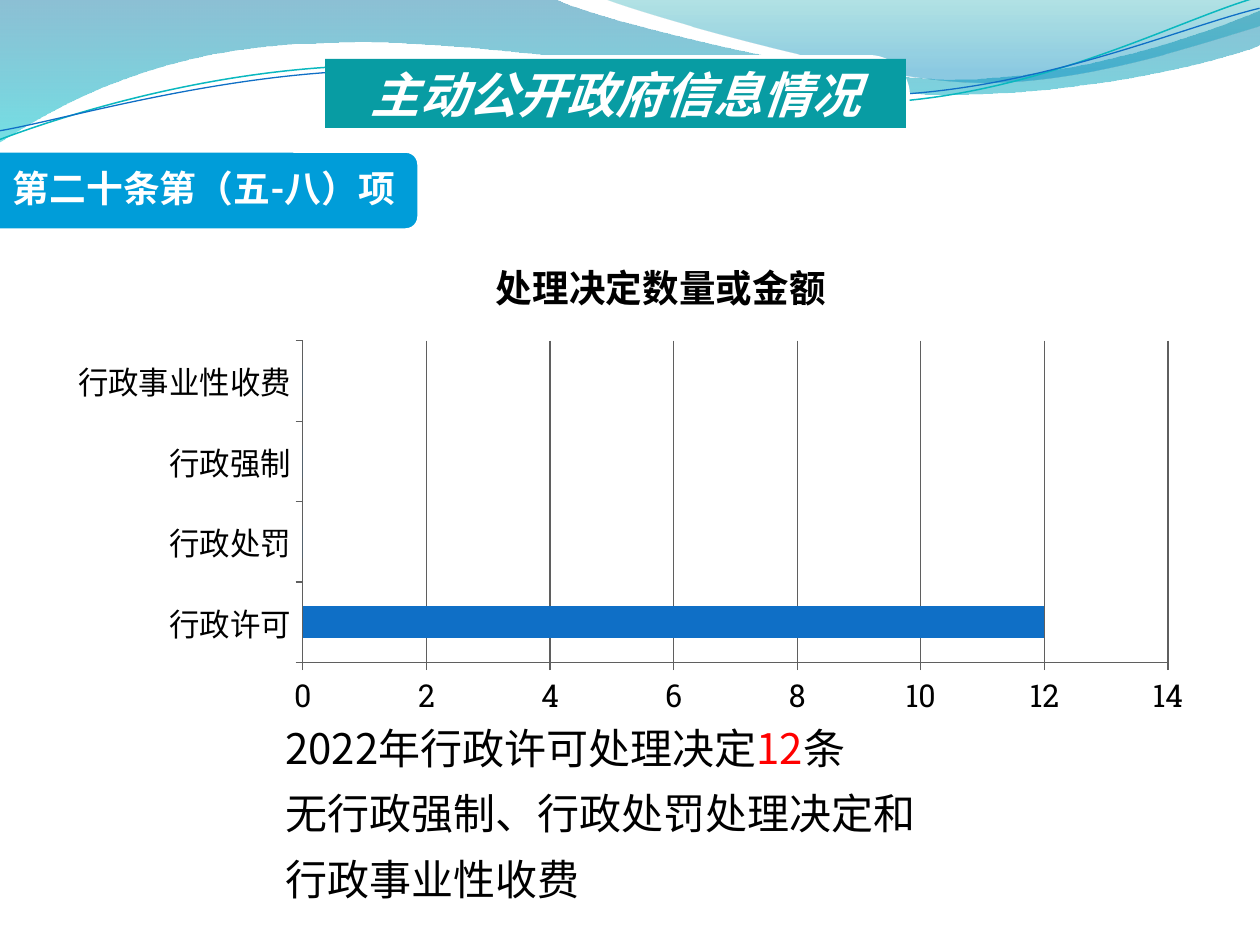
from lxml import etree
from pptx import Presentation
from pptx.chart.data import CategoryChartData
from pptx.dml.color import RGBColor
from pptx.enum.chart import XL_CHART_TYPE, XL_TICK_LABEL_POSITION, XL_TICK_MARK
from pptx.enum.shapes import MSO_SHAPE
from pptx.enum.text import MSO_ANCHOR, MSO_AUTO_SIZE, PP_ALIGN
from pptx.oxml.ns import qn
from pptx.util import Pt

ROUND_RECT = MSO_SHAPE.ROUNDED_RECTANGLE
CENTER, MIDDLE = PP_ALIGN.CENTER, MSO_ANCHOR.MIDDLE
OUTSIDE, LOW = XL_TICK_MARK.OUTSIDE, XL_TICK_LABEL_POSITION.LOW

WHITE = RGBColor(0xFF, 0xFF, 0xFF)
BLACK = RGBColor(0, 0, 0)
RED = RGBColor(0xFF, 0, 0)
TEAL = RGBColor(0x08, 0x9C, 0xA3)
TAG_BLUE = RGBColor(0x00, 0x9D, 0xD9)
BAR_BLUE = RGBColor(0x0F, 0x6F, 0xC6)
LINE_TEAL = RGBColor(0x0A, 0xB8, 0xBF)
GRID_GRAY = RGBColor(0x5F, 0x5F, 0x5F)
SANS_TC, SANS_SC, SLAB = "Noto Sans CJK TC", "Noto Sans CJK SC", "Roboto Slab"

# Content
TITLE = "主动公开政府信息情况"
TAG = "第二十条第（五-八）项"
CHART_TITLE = "处理决定数量或金额"
DECISIONS = {"行政许可": 12, "行政处罚": 0, "行政强制": 0, "行政事业性收费": 0}
SUMMARY = [
    [("2022年行政许可处理决定", BLACK), ("12", RED), ("条", BLACK)],
    [("无行政强制、行政处罚处理决定和行政事业性收费", BLACK)],
]

# Wave outlines in px: a start, then line ends (1 point) or Bézier curves (3 points)
# Gradient stops: position, colour, opacity in percent
WAVES = [
    ([(0, 0), [(554, -1)],
      [(600, 21), (837, 79), (955, 79)], [(1075, 79), (1207, 33), (1260, 11)],
      [(1261, 45)],
      [(1239, 55), (1096, 96), (940, 94)], [(784, 94), (481, 35), (324, 43)],
      [(163, 45), (58, 105), (-1, 142)], [(0, 0)]],
     [(0, RGBColor(0x00, 0x74, 0xA1), 45), (1, RGBColor(0x00, 0xC6, 0xCF), 55)]),
    ([(604, -1),
      [(641, 14), (859, 78), (969, 82)], [(1079, 87), (1211, 40), (1260, 26)],
      [(1260, 0)], [(604, -1)]],
     [(0, RGBColor(0x00, 0xA1, 0xA9), 30), (0.8, RGBColor(0x00, 0x8B, 0xBF), 45)]),
]
# Thin lines, given before they are turned by LINE_ROTATION
LINE_ROTATION = 357.3
WAVE_LINES = [
    ([(-3, 110), [(59, 90), (199, 52), (350, 53)],
      [(499, 53), (745, 118), (896, 114)], [(1049, 109), (1184, 45), (1260, 27)]],
     LINE_TEAL, 0.85),
    ([(-2, 101), [(57, 94), (207, 57), (357, 58)],
      [(509, 58), (750, 112), (902, 107)], [(1052, 104), (1188, 52), (1262, 38)]],
     BAR_BLUE, 0.75),
]


def px(n):
    return round(n * 914400 / 126)


def box(*lengths):
    return [px(n) for n in lengths]


def add_outline(shapes, outline, close):
    """Draw all points as line ends, then merge each three of a curve into a Bézier."""
    start, *segments = outline
    builder = shapes.build_freeform(*box(*start))
    builder.add_line_segments([box(*p) for segment in segments for p in segment], close=close)
    shape = builder.convert_to_shape()
    shape.shadow.inherit = False
    line_ends = iter(list(shape.element.iter(qn("a:lnTo"))))
    for segment in segments:
        first, *others = [next(line_ends) for _ in segment]
        if others:
            first.tag = qn("a:cubicBezTo")
        for other in others:
            first.append(other[0])
            other.getparent().remove(other)
    return shape


def add_round_rect(shapes, bounds, color, adjustment):
    shape = shapes.add_shape(ROUND_RECT, *box(*bounds))
    shape.shadow.inherit = False
    shape.adjustments[0] = adjustment
    shape.fill.solid()
    shape.fill.fore_color.rgb = color
    shape.line.fill.background()
    return shape


def style(font, size, color, latin, east_asian=SANS_SC, bold=False, italic=False):
    font.size, font.bold, font.italic = Pt(size), bold, italic
    font.color.rgb = color
    font.name = latin
    etree.SubElement(font._rPr, qn("a:ea")).set("typeface", east_asian)


def add_run(paragraph, text, *look, **options):
    run = paragraph.add_run()
    run.text = text
    style(run.font, *look, **options)


prs = Presentation()
prs.slide_width, prs.slide_height = box(1260, 945)
slide = prs.slides.add_slide(prs.slide_layouts[5])

# Wave decoration
for outline, stops in WAVES:
    wave = add_outline(slide.shapes, outline, True)
    wave.line.fill.background()
    wave.fill.gradient()
    wave.fill.gradient_angle = 270
    for stop, (position, color, _) in zip(wave.fill.gradient_stops, stops):
        stop.position = position
        stop.color.rgb = color
    for color_node, (_, _, opacity) in zip(wave.element.spPr.iter(qn("a:srgbClr")), stops):
        etree.SubElement(color_node, qn("a:alpha")).set("val", str(opacity * 1000))
line_group = slide.shapes.add_group_shape()
for outline, color, width in WAVE_LINES:
    wave_line = add_outline(line_group.shapes, outline, False)
    wave_line.rotation = LINE_ROTATION
    wave_line.fill.background()
    wave_line.line.color.rgb = color
    wave_line.line.width = Pt(width)

# Title as a pill on a white rim
add_round_rect(slide.shapes, (320, 55, 590, 81), WHITE, 0.5)
title = slide.shapes.title
slide.shapes.element.append(title.element)
title.left, title.top, title.width, title.height = box(325, 59, 581, 69)
pill = etree.SubElement(title.element.spPr, qn("a:prstGeom"), prst="roundRect")
guides = etree.SubElement(pill, qn("a:avLst"))
etree.SubElement(guides, qn("a:gd"), name="adj", fmla="val 50000")
title.fill.solid()
title.fill.fore_color.rgb = TEAL
frame = title.text_frame
frame.margin_left = frame.margin_right = frame.margin_top = frame.margin_bottom = 0
frame.auto_size = MSO_AUTO_SIZE.NONE
frame.vertical_anchor = MIDDLE
frame.paragraphs[0].alignment = CENTER
add_run(frame.paragraphs[0], TITLE, 28, WHITE, SANS_TC, SANS_TC, bold=True, italic=True)

# Article tag
tag_group = slide.shapes.add_group_shape()
tag = add_round_rect(tag_group.shapes, (-38, 151, 457, 79), TAG_BLUE, 0.17)
tag.line.color.rgb = WHITE
tag.line.width = Pt(2)
tag_label = tag_group.shapes.add_textbox(*box(-35, 155, 478, 71)).text_frame
tag_label.margin_top = tag_label.margin_bottom = tag_label.margin_left
tag_label.word_wrap = True
tag_label.vertical_anchor = MIDDLE
tag_label.paragraphs[0].alignment = CENTER
tag_label.paragraphs[0].line_spacing = 0.9
add_run(tag_label.paragraphs[0], TAG, 21, WHITE, SLAB, bold=True)

# Decisions chart
data = CategoryChartData()
data.categories = list(DECISIONS)
data.add_series(CHART_TITLE, list(DECISIONS.values()))
chart = slide.shapes.add_chart(XL_CHART_TYPE.BAR_CLUSTERED, *box(78, 230, 1127, 497), data).chart
style(chart.font, 18, BLACK, SLAB)
chart.has_legend = False
chart.has_title = True
chart.chart_title.include_in_layout = False
add_run(chart.chart_title.text_frame.paragraphs[0], CHART_TITLE, 21.6, BLACK, SLAB, bold=True)
plot = chart.plots[0]
plot.gap_width = 150
plot.vary_by_categories = False
bars = plot.series[0].format.fill
bars.solid()
bars.fore_color.rgb = BAR_BLUE
values = chart.value_axis
values.has_major_gridlines = True
for axis in (chart.category_axis, values):
    axis.major_tick_mark = OUTSIDE
    style(axis.tick_labels.font, 18, BLACK, SLAB)
for rule in (chart.category_axis, values, values.major_gridlines):
    rule.format.line.color.rgb = GRID_GRAY
    rule.format.line.width = Pt(0.75)
values.tick_label_position = LOW

# Summary below the chart
summary = slide.shapes.add_textbox(*box(273, 701, 680, 210)).text_frame
summary.word_wrap = True
summary.auto_size = MSO_AUTO_SIZE.SHAPE_TO_FIT_TEXT
paragraph = summary.paragraphs[0]
paragraph.line_spacing = 1.3
for number, line in enumerate(SUMMARY):
    if number:
        paragraph.add_line_break()
    for text, color in line:
        add_run(paragraph, text, 24, color, SANS_SC)

prs.save("out.pptx")
